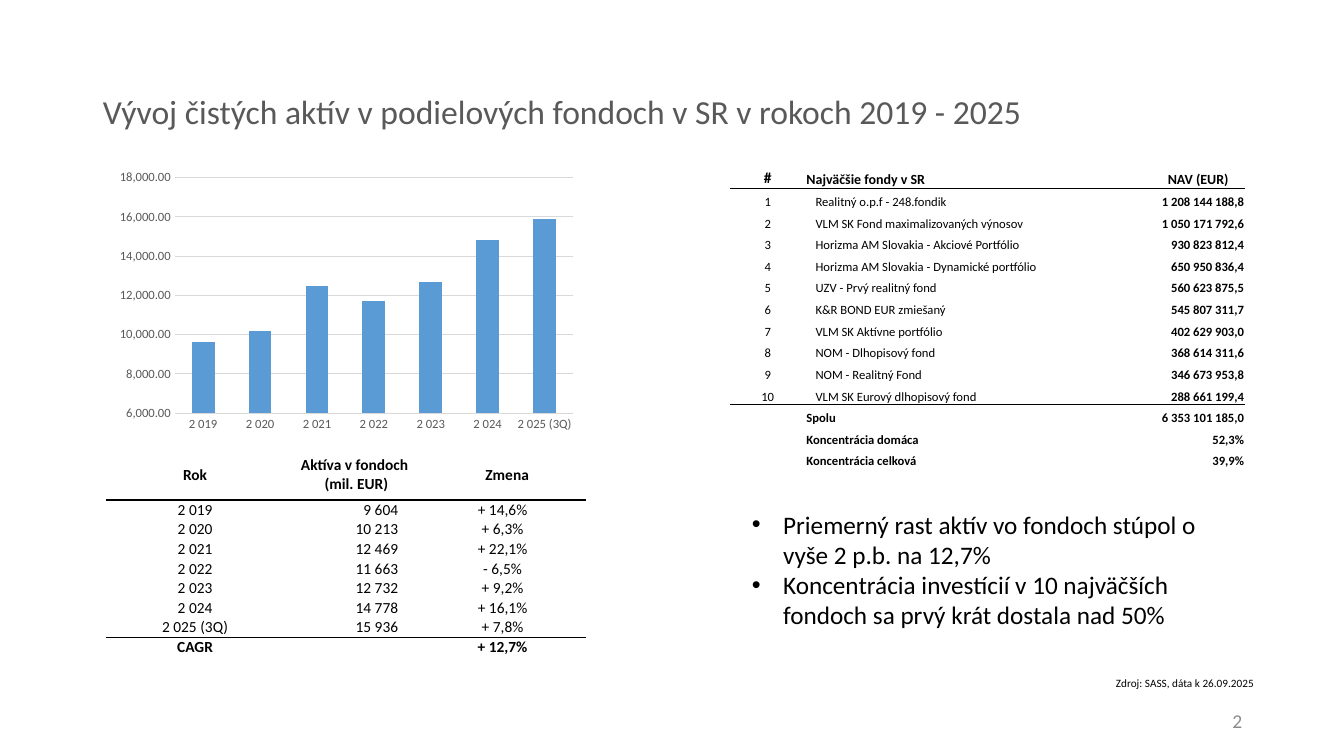
from dataclasses import dataclass
from typing import NamedTuple

from lxml.etree import SubElement
from pptx import Presentation
from pptx.chart.data import CategoryChartData
from pptx.dml.color import RGBColor
from pptx.enum.chart import XL_CHART_TYPE, XL_TICK_MARK
from pptx.enum.text import MSO_ANCHOR, MSO_AUTO_SIZE, PP_ALIGN
from pptx.oxml import parse_xml
from pptx.oxml.ns import nsdecls, qn
from pptx.util import Inches, Pt

BLACK = RGBColor(0x00, 0x00, 0x00)
GREY = RGBColor(0x59, 0x59, 0x59)
NUMBER_GREY = RGBColor(0x8C, 0x8C, 0x8C)
GRID_GREY = RGBColor(0xD9, 0xD9, 0xD9)
BLUE = RGBColor(0x5B, 0x9B, 0xD5)

SLIDE_WIDTH = Inches(13.33)
SLIDE_HEIGHT = Inches(7.5)
FONT = "Calibri"
PLAIN_TABLE_STYLE = "{2D5ABB26-0587-4C30-8999-92F81FD0307C}"
LEFT, CENTER, RIGHT = PP_ALIGN.LEFT, PP_ALIGN.CENTER, PP_ALIGN.RIGHT


class Area(NamedTuple):
    """Percentages of the width and height of the slide or chart."""
    left: float
    top: float
    width: float
    height: float

    def lengths(self) -> tuple:
        return (int(SLIDE_WIDTH * self.left / 100), int(SLIDE_HEIGHT * self.top / 100),
                int(SLIDE_WIDTH * self.width / 100), int(SLIDE_HEIGHT * self.height / 100))


@dataclass
class Label:
    area: Area
    lines: list
    size: int
    color: RGBColor = BLACK
    align: PP_ALIGN = LEFT
    anchor: MSO_ANCHOR = MSO_ANCHOR.TOP
    bulleted: bool = False


@dataclass
class CellStyle:
    size: int
    align: PP_ALIGN
    bold: bool = False
    left: float = 0.01
    right: float = 0.01
    anchor: MSO_ANCHOR = MSO_ANCHOR.BOTTOM


@dataclass
class TableSpec:
    area: Area
    column_shares: list
    header_share: float
    rows: list
    header: list
    body: list
    total: list
    total_rows: int
    merged_rows: tuple = ()


TITLE = Label(Area(6.9, 5.33, 89.57, 19.33),
              ["Vývoj čistých aktív v podielových fondoch v SR v rokoch 2019 - 2025"],
              24, GREY, anchor=MSO_ANCHOR.MIDDLE)
LABELS = [
    Label(Area(70.67, 92.67, 22.5, 5.33), ["2"], 14, NUMBER_GREY, RIGHT, MSO_ANCHOR.MIDDLE),
    Label(Area(82.3, 88.8, 12.38, 3.2), ["Zdroj: SASS, dáta k 26.09.2025"], 8),
    Label(Area(55.21, 66.67, 37.96, 17.47),
          ["Priemerný rast aktív vo fondoch stúpol o vyše 2 p.b. na 12,7%",
           "Koncentrácia investícií v 10 najväčších fondoch sa prvý krát dostala nad 50%"],
          18, bulleted=True),
]
CHART_AREA = Area(7.43, 21.87, 36.68, 37.47)
PLOT_AREA = Area(15.2, 4.4, 80.8, 83.1)
YEARS = [
    ("2 019", "9 604", "+ 14,6%"),
    ("2 020", "10 213", "+ 6,3%"),
    ("2 021", "12 469", "+ 22,1%"),
    ("2 022", "11 663", "- 6,5%"),
    ("2 023", "12 732", "+ 9,2%"),
    ("2 024", "14 778", "+ 16,1%"),
    ("2 025 (3Q)", "15 936", "+ 7,8%"),
]
FUNDS = [
    ("Realitný o.p.f - 248.fondik", "1 208 144 188,8"),
    ("VLM SK Fond maximalizovaných výnosov", "1 050 171 792,6"),
    ("Horizma AM Slovakia - Akciové Portfólio", "930 823 812,4"),
    ("Horizma AM Slovakia - Dynamické portfólio", "650 950 836,4"),
    ("UZV - Prvý realitný fond", "560 623 875,5"),
    ("K&R BOND EUR zmiešaný", "545 807 311,7"),
    ("VLM SK Aktívne portfólio", "402 629 903,0"),
    ("NOM - Dlhopisový fond", "368 614 311,6"),
    ("NOM - Realitný Fond", "346 673 953,8"),
    ("VLM SK Eurový dlhopisový fond", "288 661 199,4"),
]
YEAR_TABLE = TableSpec(
    Area(7.88, 59.47, 35.71, 27.2), [1.77, 1.43, 1.56], 0.245,
    [("Rok", "Aktíva v fondoch \n(mil. EUR)", "Zmena"), *YEARS, ("CAGR", "", "+ 12,7%")],
    [CellStyle(11, CENTER, True, anchor=MSO_ANCHOR.MIDDLE)] * 3,
    [CellStyle(11, CENTER), CellStyle(11, RIGHT, right=0.3), CellStyle(11, CENTER, right=0.1)],
    [CellStyle(11, CENTER, True), CellStyle(11, RIGHT, True), CellStyle(11, CENTER, True, right=0.1)],
    1)
FUND_TABLE = TableSpec(
    Area(54.31, 21.87, 38.33, 40.27), [0.75, 1.62, 1.31, 1.43], 0.075,
    [("#", "Najväčšie fondy v SR", "", "NAV (EUR)"),
     *((str(rank), name, "", value) for rank, (name, value) in enumerate(FUNDS, 1)),
     ("", "Spolu", "", "6 353 101 185,0"),
     ("", "Koncentrácia domáca", "", "52,3%"),
     ("", "Koncentrácia celková", "", "39,9%")],
    [CellStyle(11, CENTER, True), CellStyle(10, LEFT, True), CellStyle(10, LEFT),
     CellStyle(10, CENTER, True, left=0.51)],
    [CellStyle(9, CENTER), CellStyle(9, LEFT, left=0.1), CellStyle(9, LEFT), CellStyle(9, RIGHT, True)],
    [CellStyle(9, CENTER), CellStyle(9, LEFT, True), CellStyle(9, LEFT), CellStyle(9, RIGHT, True)],
    3, merged_rows=(1, 2, 3, 4, 7, 10))


def set_font(font, size: int, color: RGBColor, bold: bool = False) -> None:
    font.name, font.size, font.bold = FONT, Pt(size), bold
    font.color.rgb = color


def add_bullet(para) -> None:
    properties = para._p.get_or_add_pPr()
    properties.set("marL", str(Inches(0.31)))
    properties.set("indent", str(-Inches(0.31)))
    SubElement(properties, qn("a:buFont")).set("typeface", "Arial")
    SubElement(properties, qn("a:buChar")).set("char", "•")


def write_label(box, label: Label) -> None:
    frame = box.text_frame
    frame.word_wrap = True
    frame.auto_size = MSO_AUTO_SIZE.NONE
    frame.vertical_anchor = label.anchor
    frame.text = "\n".join(label.lines)
    for para in frame.paragraphs:
        if label.bulleted:
            add_bullet(para)
        para.alignment = label.align
        set_font(para.font, label.size, label.color)


def add_border(cell, side: str, drawn: bool) -> None:
    fill = f'<a:solidFill><a:srgbClr val="{BLACK}"/></a:solidFill>' if drawn else "<a:noFill/>"
    cell._tc.get_or_add_tcPr().append(parse_xml(
        f'<a:{side} {nsdecls("a")} w="{Pt(1)}">{fill}</a:{side}>'))


def write_cell(cell, text: str, style: CellStyle) -> None:
    cell.margin_left, cell.margin_right = Inches(style.left), Inches(style.right)
    cell.margin_top, cell.margin_bottom = Pt(0.4), 0
    cell.vertical_anchor = style.anchor
    cell.text = text
    for para in cell.text_frame.paragraphs:
        para.alignment = style.align
        set_font(para.font, style.size, BLACK, style.bold)
        if not text:
            SubElement(para._p, qn("a:endParaRPr")).set("sz", str(style.size * 100))


def add_table(page, spec: TableSpec) -> None:
    row_count, column_count = len(spec.rows), len(spec.column_shares)
    frame = page.shapes.add_table(row_count, column_count, *spec.area.lengths())
    width, height = frame.width, frame.height
    table = frame.table
    table.first_row = table.horz_banding = False
    table._tbl.tblPr.find(qn("a:tableStyleId")).text = PLAIN_TABLE_STYLE
    for column, share in zip(table.columns, spec.column_shares):
        column.width = int(width * share / sum(spec.column_shares))
    first_total = row_count - spec.total_rows
    for index, texts in enumerate(spec.rows):
        share = (1 - spec.header_share) / (row_count - 1) if index else spec.header_share
        table.rows[index].height = int(height * share)
        styles = spec.header if index == 0 else spec.body if index < first_total else spec.total
        for position, (text, style) in enumerate(zip(texts, styles)):
            cell = table.cell(index, position)
            write_cell(cell, text, style)
            add_border(cell, "lnT", index in (1, first_total))
            add_border(cell, "lnB", index in (0, first_total - 1))
            cell.fill.background()
        if index in spec.merged_rows:
            table.cell(index, 1).merge(table.cell(index, 2))


def add_asset_chart(page) -> None:
    data = CategoryChartData()
    data.categories = [year for year, _, _ in YEARS]
    data.add_series("Series 1", [round(int(assets.replace(" ", "")), -2) for _, assets, _ in YEARS])
    chart = page.shapes.add_chart(XL_CHART_TYPE.COLUMN_CLUSTERED, *CHART_AREA.lengths(), data).chart
    chart.has_legend = chart.has_title = False
    set_font(chart.font, 10, BLACK)
    for axis in (chart.category_axis, chart.value_axis):
        axis.major_tick_mark = axis.minor_tick_mark = XL_TICK_MARK.NONE
        axis.format.line.fill.background()
        set_font(axis.tick_labels.font, 9, GREY)
    values = chart.value_axis
    values.minimum_scale, values.maximum_scale, values.major_unit = 6000, 18000, 2000
    values.tick_labels.number_format = "#,##0.00"
    values.tick_labels.number_format_is_linked = False
    values.major_gridlines.format.line.color.rgb = GRID_GREY
    values.major_gridlines.format.line.width = Pt(0.75)
    plot = chart.plots[0]
    plot.gap_width, plot.vary_by_categories = 150, False
    fill = plot.series[0].format.fill
    fill.solid()
    fill.fore_color.rgb = BLUE
    plot_area = chart._chartSpace.chart.plotArea
    for old_layout in plot_area.findall(qn("c:layout")):
        plot_area.remove(old_layout)
    settings = {"layoutTarget": "inner", "xMode": "edge", "yMode": "edge",
                **{name: share / 100 for name, share in zip("xywh", PLOT_AREA)}}
    parts = "".join(f'<c:{name} val="{value}"/>' for name, value in settings.items())
    plot_area.insert(0, parse_xml(
        f'<c:layout {nsdecls("c")}><c:manualLayout>{parts}</c:manualLayout></c:layout>'))


def main() -> None:
    deck = Presentation()
    deck.slide_width, deck.slide_height = SLIDE_WIDTH, SLIDE_HEIGHT
    page = deck.slides.add_slide(deck.slide_layouts[5])
    title = page.shapes.title
    title.left, title.top, title.width, title.height = TITLE.area.lengths()
    write_label(title, TITLE)
    title.text_frame.paragraphs[0].line_spacing = 0.9
    for label in LABELS:
        write_label(page.shapes.add_textbox(*label.area.lengths()), label)
    add_asset_chart(page)
    for spec in (YEAR_TABLE, FUND_TABLE):
        add_table(page, spec)
    deck.save("out.pptx")


if __name__ == "__main__":
    main()
